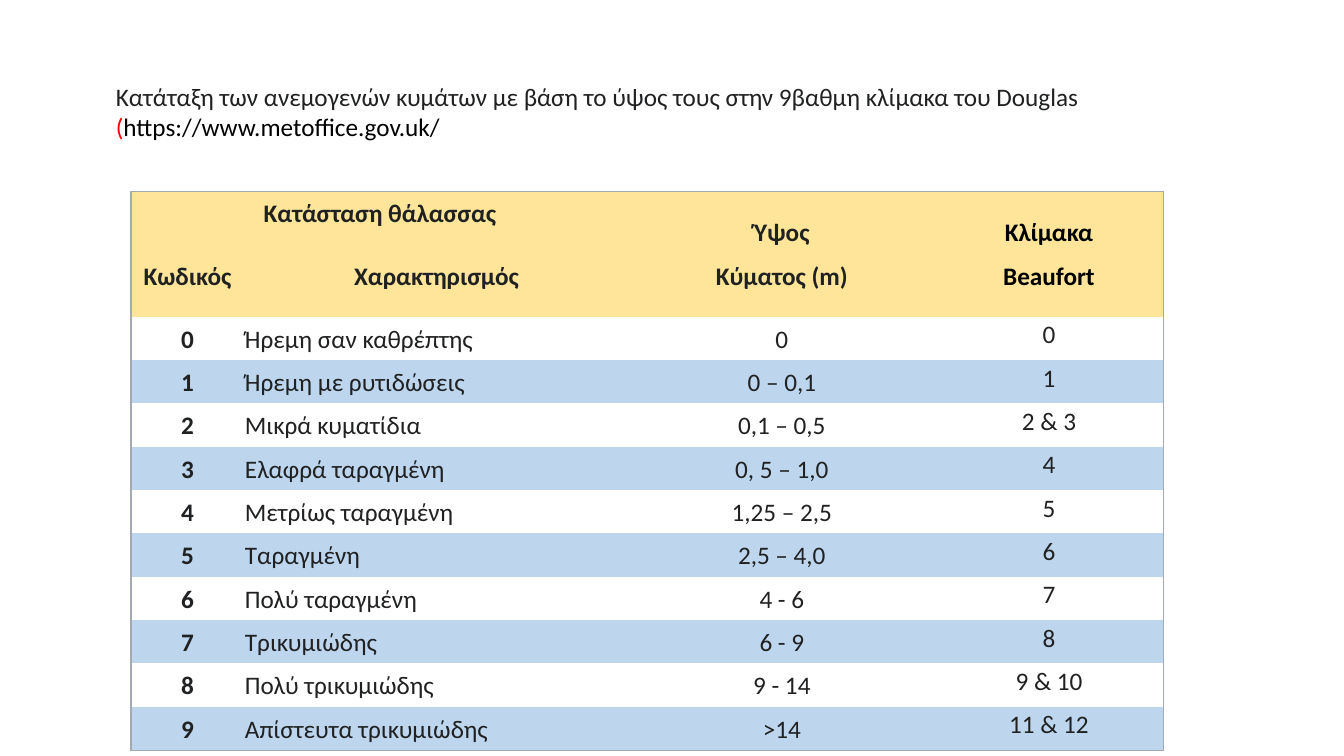
import pptx
import pptx.util
import pptx.dml.color
import pptx.enum.text
import pptx.oxml.ns
import lxml.etree

Inches = pptx.util.Inches
Pt = pptx.util.Pt
ALIGN = pptx.enum.text.PP_ALIGN
ANCHOR = pptx.enum.text.MSO_ANCHOR
INK = "202122"


def style(run, color, bold=False):
    run.font.name = "Calibri"
    run.font.size = Pt(18)
    run.font.bold = bold
    run.font.color.rgb = pptx.dml.color.RGBColor.from_string(color)


def edge(cell, side, shown):
    qn = pptx.oxml.ns.qn
    props = cell._tc.get_or_add_tcPr()
    line = lxml.etree.SubElement(props, qn("a:ln" + side), w=str(Pt(1)))
    if shown:
        fill = lxml.etree.SubElement(line, qn("a:solidFill"))
        lxml.etree.SubElement(fill, qn("a:srgbClr"), val="A2A9B1")
    else:
        lxml.etree.SubElement(line, qn("a:noFill"))


deck = pptx.Presentation()
deck.slide_width = Inches(13.33)
deck.slide_height = Inches(7.5)
slide = deck.slides.add_slide(deck.slide_layouts[6])

title = slide.shapes.add_textbox(Inches(1.05), Inches(0.76), Inches(10.11), Inches(0.71))
title.text_frame.word_wrap = True
para = title.text_frame.paragraphs[0]
for text, color in [
    ("Κατάταξη των ανεμογενών κυμάτων με βάση το ύψος τους στην 9βαθμη κλίμακα του Douglas ", INK),
    ("(", "FF0000"),
    ("https://www.metoffice.gov.uk/", "000000"),
]:
    run = para.add_run()
    run.text = text
    style(run, color)

rows = [
    ("Κατάσταση θάλασσας", "", "Ύψος\nΚύματος (m)", "Κλίμακα\nBeaufort"),
    ("Κωδικός", "Χαρακτηρισμός", "", ""),
    ("0", "Ήρεμη σαν καθρέπτης", "0", "0"),
    ("1", "Ήρεμη με ρυτιδώσεις", "0 – 0,1", "1"),
    ("2", "Μικρά κυματίδια", "0,1 – 0,5", "2 & 3"),
    ("3", "Ελαφρά ταραγμένη", "0, 5 – 1,0", "4"),
    ("4", "Μετρίως ταραγμένη", "1,25 – 2,5", "5"),
    ("5", "Ταραγμένη", "2,5 – 4,0", "6"),
    ("6", "Πολύ ταραγμένη", "4 - 6", "7"),
    ("7", "Τρικυμιώδης", "6 - 9", "8"),
    ("8", "Πολύ τρικυμιώδης", "9 - 14", "9 & 10"),
    ("9", "Απίστευτα τρικυμιώδης", ">14", "11 & 12"),
]
widths = [1.12, 3.82, 3.03, 2.27]
heights = [0.43, 0.78] + [0.43] * 10
last = len(rows) - 1

frame = slide.shapes.add_table(
    len(rows), len(widths), Inches(1.3), Inches(1.9), Inches(sum(widths)), Inches(sum(heights))
)
table = frame.table
table.first_row = False
table.horz_banding = False
for col, width in zip(table.columns, widths):
    col.width = Inches(width)
for row, height in zip(table.rows, heights):
    row.height = Inches(height)

table.cell(0, 0).merge(table.cell(0, 1))
for c in (2, 3):
    table.cell(0, c).merge(table.cell(1, c))

for r, row in enumerate(rows):
    head = r < 2
    for c, text in enumerate(row):
        cell = table.cell(r, c)
        for side, shown in [("L", c == 0), ("R", c == 3), ("T", r == 0), ("B", r == last)]:
            edge(cell, side, shown)
        cell.fill.solid()
        shade = "FFE599" if head else ("FFFFFF", "BDD6EE")[r % 2]
        cell.fill.fore_color.rgb = pptx.dml.color.RGBColor.from_string(shade)
        wide = c in (0, 2)
        cell.margin_left = cell.margin_right = Inches(0.07 if wide else 0.01)
        cell.margin_top = cell.margin_bottom = Inches(0.03 if wide else 0.01)
        cell.vertical_anchor = ANCHOR.TOP if c == 3 and not head else ANCHOR.MIDDLE
        if not text:
            continue
        cell.text_frame.text = text
        for para in cell.text_frame.paragraphs:
            para.alignment = ALIGN.LEFT if c == 1 and not head else ALIGN.CENTER
            para.line_spacing = 1.07
            para.space_after = Pt(8)
            color = "000000" if head and c == 3 else INK
            style(para.runs[0], color, head or c == 0)

deck.save("out.pptx")
